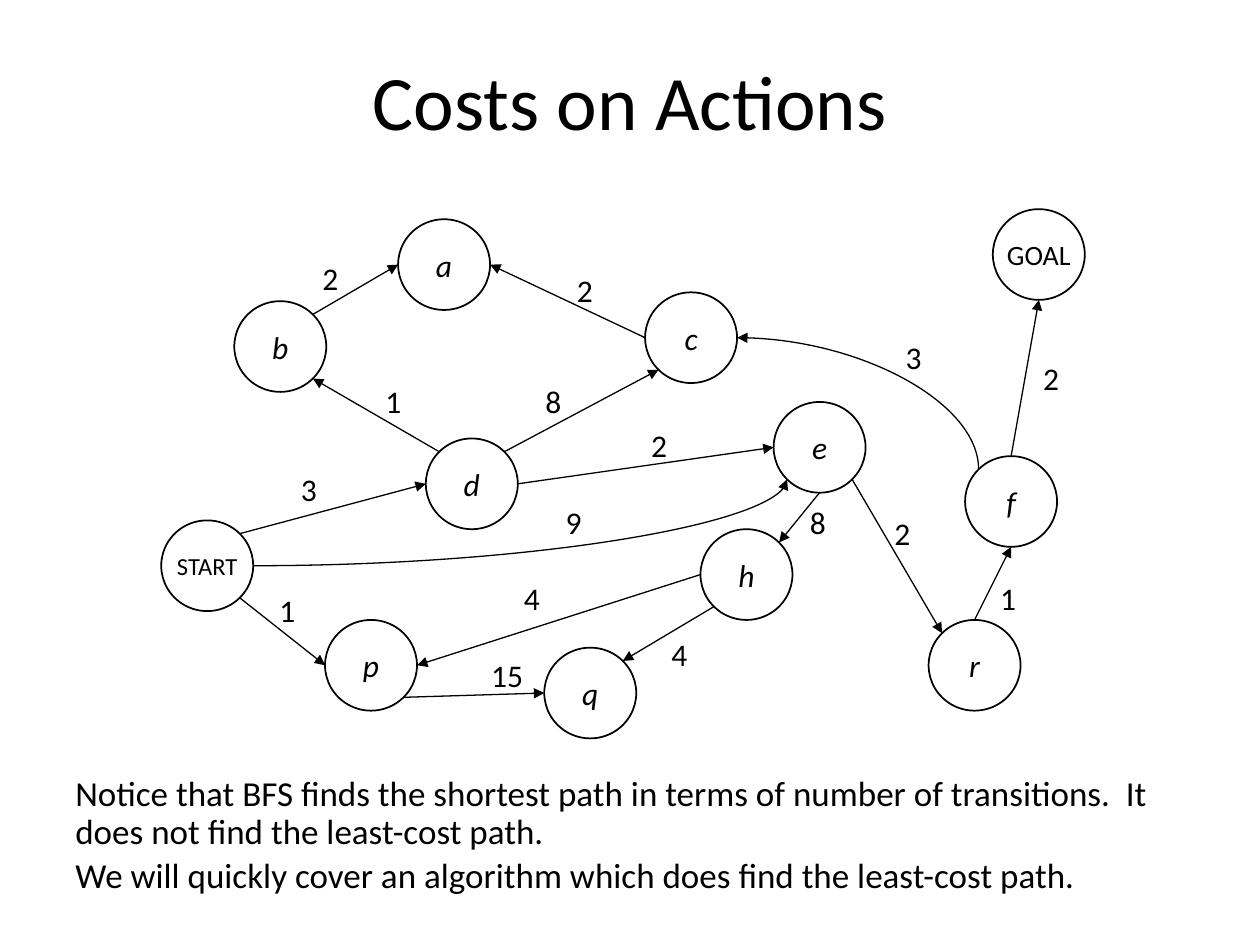
from math import cos, radians, sin

from lxml.etree import SubElement
from pptx import Presentation
from pptx.dml.color import RGBColor
from pptx.enum.shapes import MSO_CONNECTOR as Link, MSO_SHAPE as Shape
from pptx.enum.text import MSO_ANCHOR as Anchor, PP_ALIGN as Align
from pptx.oxml.ns import qn
from pptx.util import Inches, Pt

COLORS = {"ink": "000000"}
FONT = "Calibri"
NODE_W, NODE_H = 0.73, 0.72
ANGLES = {"right": 0, "bottom right": 45, "bottom": 90, "bottom left": 135,
          "left": 180, "top left": 225, "top": 270, "top right": 315}

NODES = {
    "START": (0, 2.47), "GOAL": (6.6, 0), "d": (2.1, 1.82), "b": (0.58, 0.73),
    "p": (1.3, 3.26), "q": (3.04, 3.48), "c": (3.84, 0.66), "e": (4.86, 1.53),
    "h": (4.28, 2.54), "a": (1.88, 0.08), "f": (6.38, 1.96), "r": (6.09, 3.26),
}
NODE_SIZES = {"START": 14, "GOAL": 16}

EDGES = [
    ("START", "bottom right", "p", "left", "1", (0.84, 2.98)),
    ("p", "bottom right", "q", "left", "15", (2.52, 3.5)),
    ("h", "bottom left", "q", "top right", "4", (3.95, 3.33)),
    ("h", "left", "p", "right", "4", (2.78, 2.89)),
    ("e", "bottom", "h", "top right", "8", (5.05, 2.28)),
    ("e", "bottom right", "r", "top left", "2", (5.72, 2.37)),
    ("r", "top", "f", "bottom", "1", (6.56, 2.89)),
    ("f", "top", "GOAL", "bottom", "2", (6.9, 1.14)),
    ("START", "top right", "d", "left", "3", (1.01, 2.02)),
    ("d", "top left", "b", "bottom right", "1", (1.68, 1.32)),
    ("b", "top right", "a", "left", "2", (1.18, 0.35)),
    ("c", "left", "a", "right", "2", (3.2, 0.44)),
    ("d", "top right", "c", "bottom left", "8", (2.95, 1.32)),
    ("d", "right", "e", "left", "2", (3.79, 1.67)),
]
CURVES = [
    ("c", "right", "f", "top left", "3", (5.81, 0.97), "headEnd"),
    ("START", "right", "e", "bottom left", "9", (3.11, 2.28), "tailEnd"),
]


def ink():
    return RGBColor.from_string(COLORS["ink"])


def write(paragraph, text, size, italic=False):
    paragraph.text = text
    font = paragraph.font
    font.name, font.size, font.italic = FONT, Pt(size), italic
    font.color.rgb = ink()


def add_text(slide, left, top, width, height):
    frame = slide.shapes.add_textbox(
        Inches(left), Inches(top), Inches(width), Inches(height)).text_frame
    frame.word_wrap = True
    return frame


def add_title(slide, left, top, width, height):
    frame = add_text(slide, left, top, width, height)
    frame.vertical_anchor = Anchor.MIDDLE
    heading = frame.paragraphs[0]
    write(heading, "Costs on Actions", 44)
    heading.alignment = Align.CENTER


def add_remarks(slide, left, top, width, height):
    frame = add_text(slide, left, top, width, height)
    remarks = [
        "Notice that BFS finds the shortest path in terms of number of transitions.  "
        "It does not find the least-cost path.",
        "We will quickly cover an algorithm which does find the least-cost path.",
    ]
    for index, remark in enumerate(remarks):
        paragraph = frame.add_paragraph() if index else frame.paragraphs[0]
        write(paragraph, remark, 20)
        paragraph.line_spacing = 0.9
        paragraph.space_before = Pt(4)


def add_node(slide, left, top, name):
    node = slide.shapes.add_shape(
        Shape.FLOWCHART_CONNECTOR, Inches(left), Inches(top),
        Inches(NODE_W), Inches(NODE_H))
    node.shadow.inherit = False
    node.fill.background()
    node.line.color.rgb = ink()
    node.line.width = Pt(1)
    frame = node.text_frame
    frame.word_wrap = False
    frame.vertical_anchor = Anchor.MIDDLE
    write(frame.paragraphs[0], name, NODE_SIZES.get(name, 18),
          italic=name not in NODE_SIZES)
    frame.paragraphs[0].alignment = Align.CENTER


def rim_point(left, top, name, side):
    x, y = NODES[name]
    angle = radians(ANGLES[side])
    return (Inches(left + x + NODE_W / 2 * (1 + cos(angle))),
            Inches(top + y + NODE_H / 2 * (1 + sin(angle))))


def add_edge(slide, kind, start, end, arrow_end):
    edge = slide.shapes.add_connector(kind, *start, *end)
    edge.line.color.rgb = ink()
    edge.line.width = Pt(0.75)
    properties = edge._element.spPr
    SubElement(properties.find(qn("a:ln")), qn(f"a:{arrow_end}"), type="triangle")
    SubElement(properties, qn("a:effectLst"))
    if kind == Link.CURVE:
        properties.find(qn("a:prstGeom")).set("prst", "curvedConnector2")


def add_cost(slide, left, top, cost):
    frame = add_text(slide, left, top, 0.17 + 0.17 * len(cost), 0.4)
    write(frame.paragraphs[0], cost, 18)


def add_graph(slide, left, top):
    for name, (x, y) in NODES.items():
        add_node(slide, left + x, top + y, name)
    routes = [(Link.STRAIGHT, *edge, "tailEnd") for edge in EDGES]
    routes += [(Link.CURVE, *curve) for curve in CURVES]
    for kind, source, exit_side, target, entry_side, cost, (x, y), arrow_end in routes:
        add_edge(slide, kind, rim_point(left, top, source, exit_side),
                 rim_point(left, top, target, entry_side), arrow_end)
        add_cost(slide, left + x, top + y, cost)


def main():
    deck = Presentation()
    deck.slide_width, deck.slide_height = Inches(10), Inches(7.5)
    slide = deck.slides.add_slide(deck.slide_layouts[6])
    add_title(slide, 0.5, 0.28, 9, 1.03)
    add_remarks(slide, 0.5, 6.11, 9, 1.34)
    add_graph(slide, 1.28, 1.66)
    deck.save("out.pptx")


if __name__ == "__main__":
    main()
